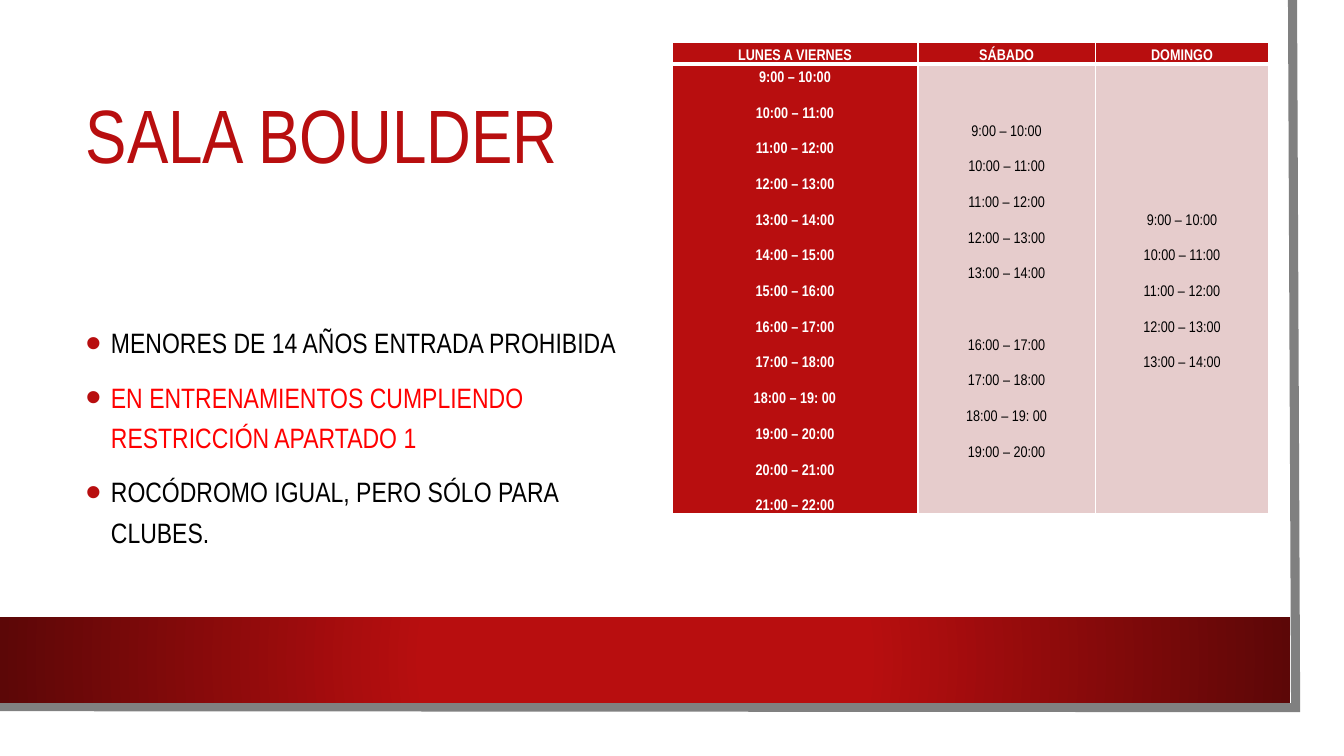
from lxml.etree import SubElement
from pptx import Presentation
from pptx.dml.color import RGBColor
from pptx.enum.shapes import MSO_SHAPE as Shape
from pptx.enum.text import MSO_ANCHOR as Anchor, PP_ALIGN as Align
from pptx.oxml import parse_xml
from pptx.oxml.ns import nsdecls, qn
from pptx.util import Inches, Pt

WIDTH, HEIGHT = Inches(13.33), Inches(7.5)
FONT = "Arial Narrow"
RED = RGBColor(0xB8, 0x0E, 0x0F)
DARK_RED = RGBColor(0x5C, 0x07, 0x07)
ALERT = RGBColor(0xFF, 0x00, 0x00)
PINK = RGBColor(0xE6, 0xCC, 0xCC)
GREY = RGBColor(0x80, 0x80, 0x80)
WHITE = RGBColor(0xFF, 0xFF, 0xFF)
BLACK = RGBColor(0x00, 0x00, 0x00)

RULES = [
    ("MENORES DE 14 AÑOS ENTRADA PROHIBIDA", BLACK),
    ("EN ENTRENAMIENTOS CUMPLIENDO RESTRICCIÓN APARTADO 1", ALERT),
    ("ROCÓDROMO IGUAL, PERO SÓLO PARA CLUBES.", BLACK),
]
SLOTS = [
    "9:00 – 10:00", "10:00 – 11:00", "11:00 – 12:00", "12:00 – 13:00",
    "13:00 – 14:00", "14:00 – 15:00", "15:00 – 16:00", "16:00 – 17:00",
    "17:00 – 18:00", "18:00 – 19: 00", "19:00 – 20:00", "20:00 – 21:00",
    "21:00 – 22:00",
]
MORNING, AFTERNOON = SLOTS[:5], SLOTS[7:11]
# Day, column width in % of the slide, blocks of opening hours, body fill
DAYS = [
    ("LUNES A VIERNES", 18.3, [SLOTS], RED),
    ("SÁBADO", 13.2, [MORNING, AFTERNOON], PINK),
    ("DOMINGO", 12.9, [MORNING], PINK),
]
ROW_HEIGHTS = (2.13, 52.53)
BLOCK_GAP = 25.5


def across(percent):
    return round(WIDTH * percent / 100)


def down(percent):
    return round(HEIGHT * percent / 100)


def place(item, left, top, width, height):
    item.left, item.top = across(left), down(top)
    item.width, item.height = across(width), down(height)


def write(para, text, size, color, bold=False, align=Align.LEFT,
          spacing=1.0, before=0, after=0):
    para.alignment, para.line_spacing = align, spacing
    para.space_before, para.space_after = Pt(before), Pt(after)
    span = para.add_run()
    span.text = text
    span.font.name, span.font.size = FONT, Pt(size)
    span.font.bold, span.font.color.rgb = bold, color


def next_para(frame, index):
    return frame.add_paragraph() if index else frame.paragraphs[0]


def add_bullet(para):
    props = para._p.get_or_add_pPr()
    props.set("marL", str(Inches(0.25)))
    props.set("indent", str(-Inches(0.25)))
    color = SubElement(props, qn("a:buClr"))
    SubElement(color, qn("a:srgbClr"), val=str(RED))
    SubElement(props, qn("a:buSzPct"), val="160000")
    SubElement(props, qn("a:buFont"), typeface="Arial")
    SubElement(props, qn("a:buChar"), char="•")


def add_panel(slide, left, top, width, height):
    panel = slide.shapes.add_shape(Shape.RECTANGLE, 0, 0, 0, 0)
    place(panel, left, top, width, height)
    panel.shadow.inherit = False
    panel.fill.solid()
    panel.fill.fore_color.rgb = WHITE
    panel.line.fill.background()
    return panel


def fill_radial(shape, inner, outer):
    props = shape.element.spPr
    gradient = parse_xml(
        f'<a:gradFill {nsdecls("a")} rotWithShape="1"><a:gsLst>'
        f'<a:gs pos="34000"><a:srgbClr val="{inner}"/></a:gs>'
        f'<a:gs pos="100000"><a:srgbClr val="{outer}"/></a:gs></a:gsLst>'
        '<a:path path="circle"><a:fillToRect l="50000" t="50000" '
        'r="50000" b="50000"/></a:path></a:gradFill>')
    props.replace(props.find(qn("a:solidFill")), gradient)


def add_page_edge(slide):
    builder = slide.shapes.build_freeform(across(96.17), 0)
    corners = [(across(96.4), down(93.6)), (across(-0.23), down(93.47))]
    builder.add_line_segments(corners, close=False)
    edge = builder.convert_to_shape()
    edge.shadow.inherit = False
    edge.fill.background()
    edge.line.color.rgb, edge.line.width = GREY, Pt(6.5)
    outline = edge.element.spPr.find(qn("a:ln"))
    SubElement(outline, qn("a:miter"), lim="800000")


def add_title(slide, text):
    title = slide.shapes.title
    place(title, 5.63, 10, 85.3, 16.8)
    title.text_frame.vertical_anchor = Anchor.MIDDLE
    write(title.text_frame.paragraphs[0], text, 54, RED, spacing=0.9)
    slide.shapes.element.append(title.element)


def add_rules(slide):
    body = slide.placeholders[1]
    place(body, 5.63, 30.13, 41.79, 48.27)
    frame = body.text_frame
    frame.vertical_anchor = Anchor.MIDDLE
    frame.margin_top = down(6.93)
    for index, (text, color) in enumerate(RULES):
        para = next_para(frame, index)
        add_bullet(para)
        write(para, text, 20, color, spacing=1.2, before=10 if index else 0)
    slide.shapes.element.append(body.element)


def add_borders(cell, bottom):
    props = cell._tc.get_or_add_tcPr()
    for side, width in (("L", 1), ("R", 1), ("T", 1), ("B", bottom)):
        line = SubElement(props, qn(f"a:ln{side}"), w=str(Pt(width)))
        paint = SubElement(line, qn("a:solidFill"))
        SubElement(paint, qn("a:srgbClr"), val=str(WHITE))


def fill_cell(cell, blocks, fill, bottom=1):
    add_borders(cell, bottom)
    cell.fill.solid()
    cell.fill.fore_color.rgb = fill
    cell.vertical_anchor = Anchor.MIDDLE
    cell.margin_left = cell.margin_right = Inches(0.06)
    cell.margin_top = cell.margin_bottom = 0
    strong = fill == RED
    index = 0
    for block in blocks:
        for position, text in enumerate(block):
            starts_later_block = index and position == 0
            write(next_para(cell.text_frame, index), text, 11,
                  WHITE if strong else BLACK, bold=strong,
                  align=Align.CENTER, spacing=1.5,
                  before=BLOCK_GAP if starts_later_block else 0, after=10)
            index += 1


def add_timetable(slide):
    width = sum(day[1] for day in DAYS)
    table = slide.shapes.add_table(
        len(ROW_HEIGHTS), len(DAYS), across(50), down(5.6),
        across(width), down(sum(ROW_HEIGHTS))).table
    table.horz_banding = False
    for row, height in zip(table.rows, ROW_HEIGHTS):
        row.height = down(height)
    for column, (day, share, blocks, fill) in enumerate(DAYS):
        table.columns[column].width = across(share)
        fill_cell(table.cell(0, column), [[day]], RED, bottom=3)
        fill_cell(table.cell(1, column), blocks, fill)


def main():
    deck = Presentation()
    deck.slide_width, deck.slide_height = WIDTH, HEIGHT
    page = deck.slides.add_slide(deck.slide_layouts[1])

    # Sheet, its grey edge and the red band
    add_panel(page, 0, 0, 98.27, 96.93)
    add_page_edge(page)
    band = add_panel(page, 0, 81.67, 96.02, 11.33)
    fill_radial(band, RED, DARK_RED)

    # Heading, rules and timetable
    add_title(page, "SALA BOULDER")
    add_rules(page)
    add_timetable(page)
    deck.save("out.pptx")


if __name__ == "__main__":
    main()
